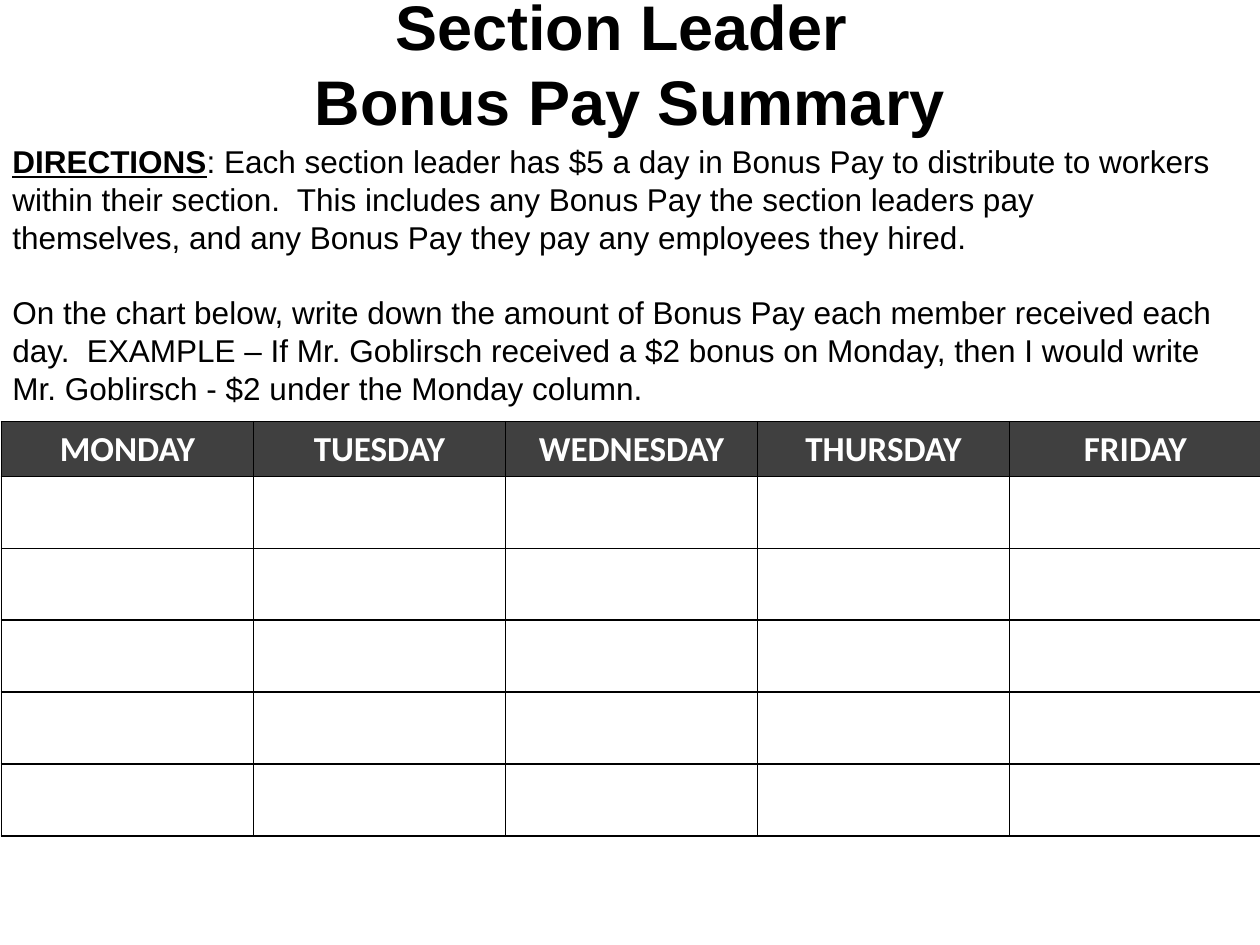
from lxml.etree import SubElement as Sub
from pptx import Presentation as Deck
from pptx.dml.color import RGBColor as Rgb
from pptx.enum.text import MSO_ANCHOR as Anchor, PP_ALIGN as Align
from pptx.oxml.ns import qn
from pptx.util import Cm, Pt

INK = {"text": "000000", "head": "404040", "white": "FFFFFF"}
FORMS = {
    "title": {"name": "Arial", "size": Pt(36), "bold": True},
    "lead": {"name": "Arial", "size": Pt(18), "bold": True, "underline": True},
    "body": {"name": "Arial", "size": Pt(18), "bold": False},
    "day": {"name": "Calibri", "size": Pt(20), "bold": True},
}
DAYS = ["MONDAY", "TUESDAY", "WEDNESDAY", "THURSDAY", "FRIDAY"]
ROWS = 5


def style(font, form, ink="text"):
    for key, value in FORMS[form].items():
        setattr(font, key, value)
    font.color.rgb = Rgb.from_string(INK[ink])


def add_box(top, height, anchor, paras):
    """Full-width text box; each paragraph is a list of (text, form) runs."""
    frame = slide.shapes.add_textbox(0, Cm(top), Cm(25.4), Cm(height)).text_frame
    frame.word_wrap = True
    frame.vertical_anchor = anchor
    for i, runs in enumerate(paras):
        para = frame.add_paragraph() if i else frame.paragraphs[0]
        para.line_spacing = Pt(FORMS[runs[0][1]]["size"].pt * 1.2)
        for text, form in runs:
            for n, line in enumerate(text.split("\n")):
                if n:
                    para.add_line_break()
                run = para.add_run()
                run.text = line
                style(run.font, form)
    return frame.paragraphs


deck = Deck()
deck.slide_width, deck.slide_height = Cm(25.4), Cm(19.05)
slide = deck.slides.add_slide(deck.slide_layouts[6])

# Title
title = add_box(0, 2.54, Anchor.MIDDLE,
                [[("Section Leader \nBonus Pay Summary", "title")]])
title[0].alignment = Align.CENTER

# Week table
grid = slide.shapes.add_table(ROWS + 1, len(DAYS), Cm(0.03), Cm(8.5),
                              Cm(25.4), Cm(8.38)).table
for col in grid.columns:
    col.width = Cm(5.08)
for r, row in enumerate(grid.rows):
    row.height = Cm(1.45 if r else 0.99)
    for c, cell in enumerate(row.cells):
        props = cell._tc.get_or_add_tcPr()
        for side in ("lnL", "lnR", "lnT", "lnB"):
            edge = Sub(props, qn(f"a:{side}"), w=str(Pt(1)))
            Sub(Sub(edge, qn("a:solidFill")), qn("a:srgbClr"), val=INK["text"])
        cell.fill.solid()
        cell.fill.fore_color.rgb = Rgb.from_string(INK["white" if r else "head"])
        if r == 0:
            para = cell.text_frame.paragraphs[0]
            para.alignment = Align.CENTER
            run = para.add_run()
            run.text = DAYS[c]
            style(run.font, "day", "white")

# Directions
notes = add_box(2.74, 5.64, Anchor.TOP, [
    [("DIRECTIONS", "lead"),
     (": Each section leader has $5 a day in Bonus Pay to distribute to workers\n"
      "within their section.  This includes any Bonus Pay the section leaders pay\n"
      "themselves, and any Bonus Pay they pay any employees they hired.", "body")],
    [("On the chart below, write down the amount of Bonus Pay each member received "
      "each day.  EXAMPLE – If Mr. Goblirsch received a $2 bonus on Monday, then I "
      "would write Mr. Goblirsch - $2 under the Monday column.", "body")],
])
notes[1].space_before = Pt(21.6)

deck.save("out.pptx")
